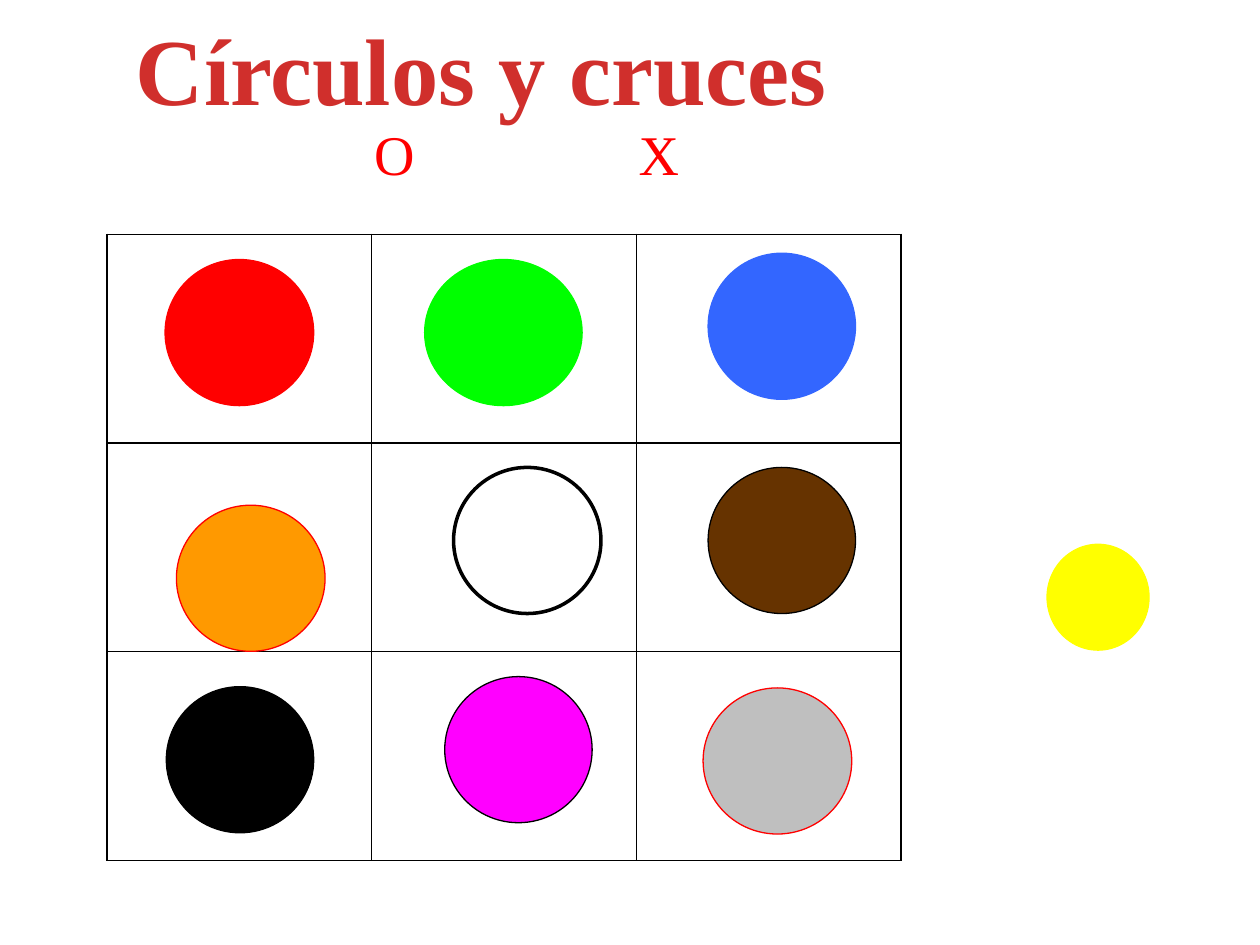
"""Build a noughts-and-crosses board slide with coloured circles."""
from lxml.etree import SubElement
from pptx import Presentation
from pptx.dml.color import RGBColor
from pptx.enum.shapes import MSO_SHAPE as Shape
from pptx.enum.text import MSO_ANCHOR as Anchor, PP_ALIGN as Align
from pptx.oxml.ns import qn
from pptx.util import Inches, Pt

COLORS = {
    "red": "FF0000", "yellow": "FFFF00", "orange": "FF9900", "gray": "BFBFBF",
    "green": "00FF00", "blue": "3366FF", "white": "FFFFFF", "black": "000000",
    "magenta": "FF00FF", "brown": "663300", "title": "D02F2C",
}
CIRCLES = [
    (1.31, 2.06, 1.18, 1.16, "red", "red", 0.75),
    (8.31, 4.32, 0.81, 0.84, "yellow", "yellow", 0.75),
    (1.4, 4.01, 1.18, 1.16, "orange", "red", 0.75),
    (5.58, 5.46, 1.18, 1.16, "gray", "red", 0.75),
    (3.37, 2.06, 1.25, 1.16, "green", "green", 0.75),
    (5.62, 2.01, 1.17, 1.16, "blue", "blue", 0.75),
    (3.6, 3.71, 1.17, 1.16, "white", "black", 2),
    (1.32, 5.45, 1.17, 1.16, "black", "black", 0.75),
    (3.53, 5.37, 1.17, 1.16, "magenta", "black", 0.75),
    (5.62, 3.71, 1.17, 1.16, "brown", "black", 0.75),
]
BOARD_SIZE = 3
COLUMN_WIDTH = 2.1


def rgb(name):
    """Return the named palette colour."""
    return RGBColor.from_string(COLORS[name])


def write_text(sp, text, color, align, **font):
    """Fill a text shape with one formatted line and return its paragraph."""
    tf = sp.text_frame
    tf.word_wrap = False
    p = tf.paragraphs[0]
    p.alignment = align
    r = p.add_run()
    r.text = text
    for name, value in {"name": "Times New Roman", **font}.items():
        setattr(r.font, name, value)
    r.font.color.rgb = rgb(color)
    return p


def add_title(s):
    """Place and format the title."""
    sp = s.shapes.title
    box = {"left": 0.95, "top": 0.04, "width": 5.74, "height": 1.01}
    for name, value in box.items():
        setattr(sp, name, Inches(value))
    sp.text_frame.vertical_anchor = Anchor.TOP
    write_text(sp, "Círculos y cruces", "title", Align.CENTER, size=Pt(54), bold=True)


def add_marks(s):
    """Add the O and X marks, one board column apart."""
    sp = s.shapes.add_textbox(Inches(2.87), Inches(0.9), Inches(2.65), Inches(0.64))
    p = write_text(sp, "O\tX", "red", Align.LEFT, size=Pt(32))
    tabs = SubElement(p._p.get_or_add_pPr(), qn("a:tabLst"))
    SubElement(tabs, qn("a:tab"), pos=str(Inches(COLUMN_WIDTH)), algn="l")


def style_cell(cell):
    """Give a cell black borders and no fill."""
    tc_pr = cell._tc.get_or_add_tcPr()
    for side in ("lnL", "lnR", "lnT", "lnB"):
        ln = SubElement(tc_pr, qn(f"a:{side}"), w=str(Pt(1)))
        fill = SubElement(ln, qn("a:solidFill"))
        SubElement(fill, qn("a:srgbClr"), val=COLORS["black"])
    cell.fill.background()


def add_board(s):
    """Add the three-by-three board as a table."""
    width, height = Inches(COLUMN_WIDTH * BOARD_SIZE), Inches(4.97)
    table = s.shapes.add_table(
        BOARD_SIZE, BOARD_SIZE, Inches(0.85), Inches(1.86), width, height).table
    for flag in ("first_row", "horz_banding"):
        setattr(table, flag, False)
    for cell in table.iter_cells():
        style_cell(cell)


def add_circle(s, left, top, width, height, fill, line, weight):
    """Add one coloured circle."""
    box = [Inches(value) for value in (left, top, width, height)]
    sp = s.shapes.add_shape(Shape.OVAL, *box)
    sp.shadow.inherit = False
    sp.fill.solid()
    sp.fill.fore_color.rgb = rgb(fill)
    sp.line.color.rgb = rgb(line)
    sp.line.width = Pt(weight)


def main():
    """Build and save the slide."""
    prs = Presentation()
    prs.slide_width, prs.slide_height = Inches(10), Inches(7.5)
    s = prs.slides.add_slide(prs.slide_layouts[5])
    add_board(s)
    for circle in CIRCLES:
        add_circle(s, *circle)
    add_title(s)
    add_marks(s)
    prs.save("out.pptx")


if __name__ == "__main__":
    main()
